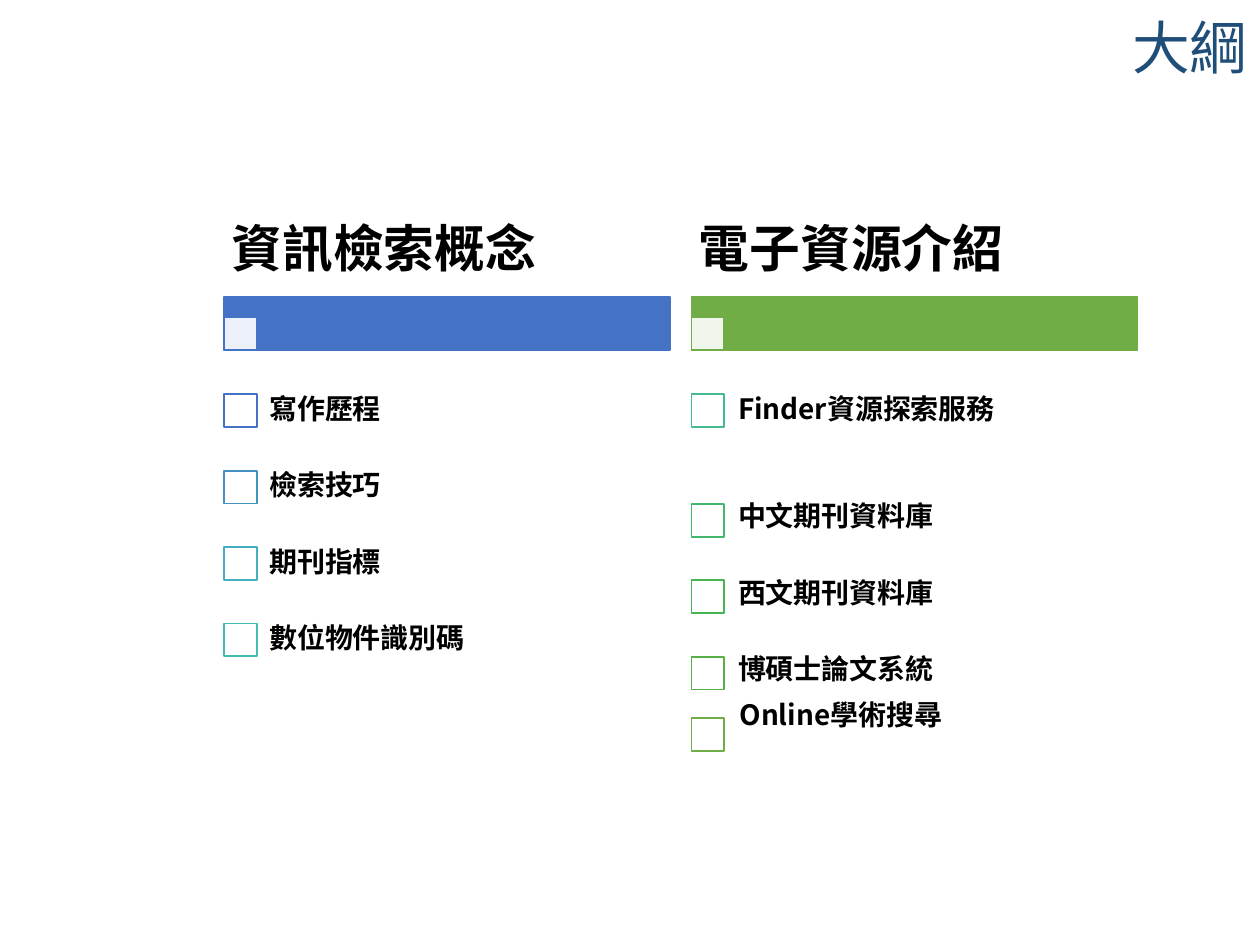
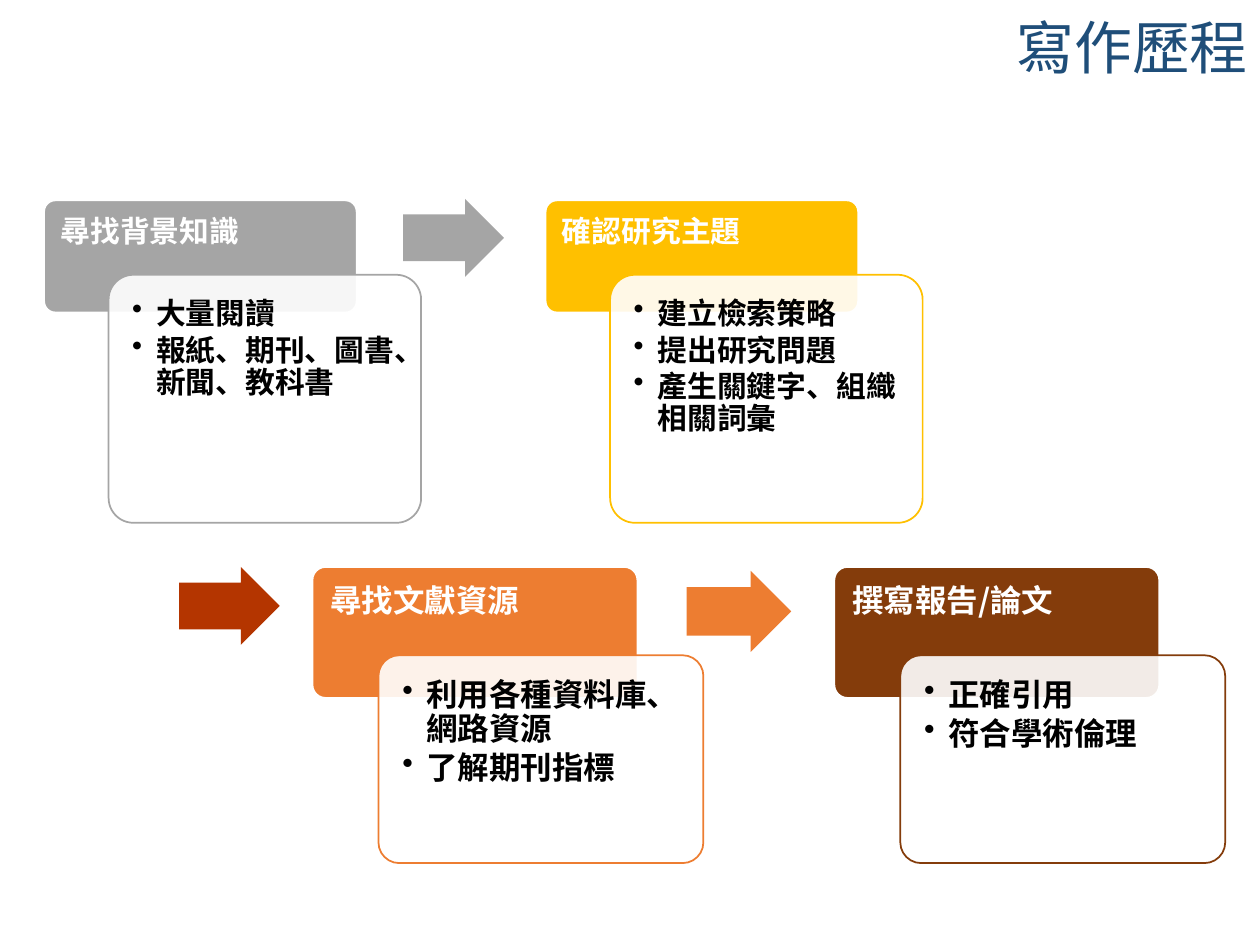
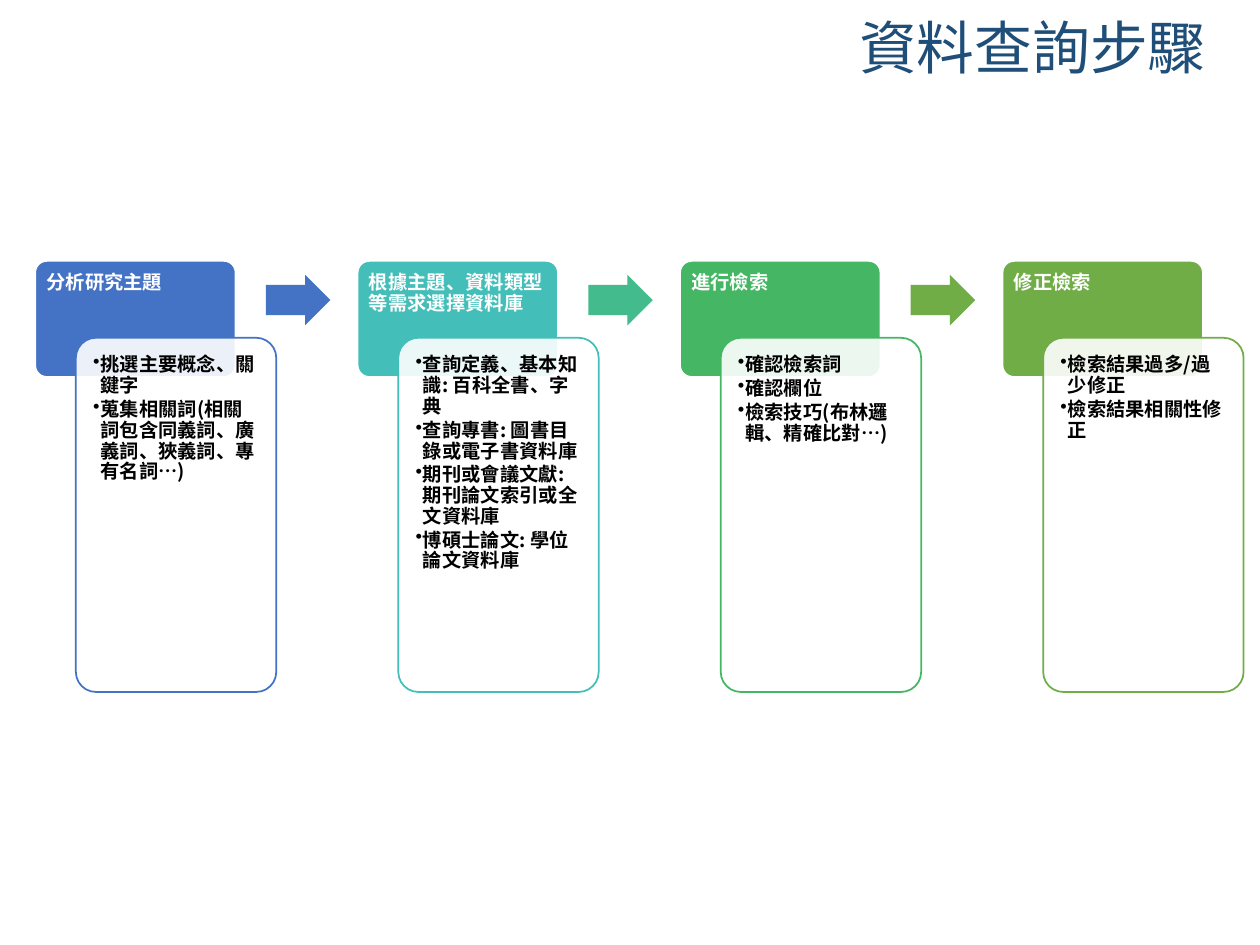
from lxml.etree import SubElement
from pptx import Presentation
from pptx.dml.color import RGBColor
from pptx.enum.shapes import MSO_SHAPE as Shape
from pptx.enum.text import MSO_ANCHOR as Anchor, PP_ALIGN as Align
from pptx.oxml.ns import qn
from pptx.util import Cm, Pt

FONT = "Noto Sans CJK SC"
COLORS = {
    "title": "1F4E79", "white": "FFFFFF", "black": "000000",
    "blue": "4472C4", "sky": "4491C2", "cyan": "43AFC0", "turquoise": "43BDAE",
    "teal": "43BEB9", "jade": "43BB8D", "mint": "44B76E", "emerald": "45B664",
    "grass": "45B451", "leaf": "56B046", "green": "70AD47",
    "gray": "A5A5A5", "yellow": "FFC000", "orange": "ED7D31",
    "brown": "843C0B", "rust": "B43500",
}
CORNER = 0.1
CORNER_INSET = CORNER * 0.293  # text inset of a rounded corner, per unit of height


class Slides:
    def __init__(self):
        self.deck = Presentation()
        self.deck.slide_width, self.deck.slide_height = Cm(25.4), Cm(19.05)
        self.page = None

    def new_page(self, title, left, align=Align.RIGHT):
        self.page = self.deck.slides.add_slide(self.deck.slide_layouts[6])
        self.label(title, left, 0, 25.4 - left, 2.03, 33, color="title",
                   bold=False, align=align, margins=(0.25, 0.13))

    def style(self, para, size, color, bold=True):
        font = para.font
        font.size, font.bold, font.name = Pt(size), bold, FONT
        font.color.rgb = RGBColor.from_string(COLORS[color])
        east_asian = SubElement(para._p.pPr.find(qn("a:defRPr")), qn("a:ea"))
        east_asian.set("typeface", FONT)

    def label(self, text, left, top, width, height, size, color="black",
              bold=True, align=Align.LEFT, margins=(0.3, 0.3)):
        """One line of text, centred vertically in its box."""
        box = self.page.shapes.add_textbox(Cm(left), Cm(top), Cm(width), Cm(height))
        frame = box.text_frame
        frame.word_wrap, frame.vertical_anchor = True, Anchor.MIDDLE
        frame.margin_left = frame.margin_right = Cm(margins[0])
        frame.margin_top = frame.margin_bottom = Cm(margins[1])
        para = frame.paragraphs[0]
        para.text, para.alignment, para.line_spacing = text, align, 0.9
        self.style(para, size, color, bold)

    def shape(self, kind, left, top, width, height, fill, line=None, opacity=None):
        shape = self.page.shapes.add_shape(kind, Cm(left), Cm(top), Cm(width), Cm(height))
        shape.shadow.inherit = False
        shape.fill.solid()
        shape.fill.fore_color.rgb = RGBColor.from_string(COLORS[fill])
        if opacity:
            tint = shape._element.spPr.find(qn("a:solidFill"))[0]
            SubElement(tint, qn("a:alpha")).set("val", str(opacity * 1000))
        if line:
            shape.line.color.rgb = RGBColor.from_string(COLORS[line])
            shape.line.width = Pt(1)
        else:
            shape.line.fill.background()
        return shape

    def arrow(self, left, top, width, height, color):
        arrow = self.shape(Shape.RIGHT_ARROW, left, top, width, height, color)
        arrow.adjustments[0], arrow.adjustments[1] = 0.6, 0.5

    def panel(self, lines, size, color, margin, indent, *place, **look):
        """Rounded box with top-left text; an indent makes the lines bullets."""
        panel = self.shape(Shape.ROUNDED_RECTANGLE, *place, **look)
        panel.adjustments[0] = CORNER
        frame = panel.text_frame
        frame.word_wrap, frame.vertical_anchor = True, Anchor.TOP
        frame.margin_left = frame.margin_right = Cm(margin)
        frame.margin_top = frame.margin_bottom = Cm(margin)
        for number, line in enumerate(lines):
            para = frame.add_paragraph() if number else frame.paragraphs[0]
            para.text, para.alignment = line, Align.LEFT
            para.line_spacing = Pt(round(size * 1.08, 1))
            if indent:
                para.space_after = Pt(round(size * 0.15, 1))
                props = para._p.get_or_add_pPr()
                props.set("marL", str(Cm(indent)))
                props.set("indent", str(-Cm(indent)))
                SubElement(props, qn("a:buChar")).set("char", "•")
            self.style(para, size, color)

    def card(self, left, top, heading, points, color, layout):
        """Coloured heading with a translucent list overlapping its corner."""
        width, head, body = layout["width"], layout["head"], layout["body"]
        right, down = layout["offset"]
        size, margin = layout["size"], layout["margin"]
        self.panel([heading], size, "white", margin - CORNER_INSET * head, 0,
                   left, top, width, head, fill=color, line="white")
        self.panel(points, size, "black", margin, layout["indent"],
                   left + right, top + down, width, body,
                   fill="white", line=color, opacity=90)

    def topic(self, left, heading, color, items):
        """Heading over a bar, then ticked items: text, colour, box top, text left and top."""
        side = 0.66
        self.shape(Shape.RECTANGLE, left, 5.99, 8.99, 1.07, color, color)
        self.shape(Shape.RECTANGLE, left, 6.4, side, side, "white", color, 90)
        self.label(heading, left, 4.11, 8.99, 1.91, 29, margins=(0.15, 0.1))
        for text, outline, box_top, text_left, text_top in items:
            self.shape(Shape.RECTANGLE, left, box_top, side, side, "white", outline)
            self.label(text, text_left, text_top, 8.36, 1.55, 16)


UPPER = dict(width=6.3, head=2.26, body=5, offset=(1.3, 1.5),
             size=17, margin=0.33, indent=0.48)
LOWER = dict(width=6.55, head=2.64, body=4.19, offset=(1.33, 1.78),
             size=18, margin=0.36, indent=0.48)
STEP = dict(width=4.04, head=2.34, body=7.14, offset=(0.82, 1.55),
            size=11, margin=0.23, indent=0.15)


def outline(slides):
    slides.new_page("大綱", 10.8)
    concepts = [("寫作歷程", "blue"), ("檢索技巧", "sky"),
                ("期刊指標", "cyan"), ("數位物件識別碼", "turquoise")]
    slides.topic(4.52, "資訊檢索概念", "blue",
                 [(text, color, 7.95 + 1.54 * row, 5.13, 7.5 + 1.54 * row)
                  for row, (text, color) in enumerate(concepts)])
    slides.topic(13.94, "電子資源介紹", "green", [
        ("Finder資源探索服務", "jade", 7.95, 14.58, 7.5),
        ("中文期刊資料庫", "mint", 10.16, 14.58, 9.66),
        ("西文期刊資料庫", "grass", 11.7, 14.58, 11.2),
        ("博碩士論文系統", "leaf", 13.24, 14.58, 12.74),
        ("Online學術搜尋", "green", 14.48, 14.61, 13.67),
    ])


def writing_process(slides):
    slides.new_page("寫作歷程", 11.1)
    slides.card(0.89, 4.04, "尋找背景知識",
                ["大量閱讀", "報紙、期刊、圖書、新聞、教科書"], "gray", UPPER)
    slides.arrow(8.13, 4.01, 2.03, 1.57, "gray")
    slides.card(11, 4.04, "確認研究主題",
                ["建立檢索策略", "提出研究問題", "產生關鍵字、組織相關詞彙"],
                "yellow", UPPER)
    slides.arrow(3.61, 11.43, 2.03, 1.57, "rust")
    slides.card(6.3, 11.43, "尋找文獻資源",
                ["利用各種資料庫、網路資源", "了解期刊指標"], "orange", LOWER)
    slides.arrow(13.84, 11.51, 2.11, 1.63, "orange")
    slides.card(16.82, 11.43, "撰寫報告/論文",
                ["正確引用", "符合學術倫理"], "brown", LOWER)


def search_steps(slides):
    slides.new_page("資料查詢步驟", 17.07, Align.LEFT)
    steps = [
        ("分析研究主題", "blue",
         ["挑選主要概念、關鍵字",
          "蒐集相關詞(相關詞包含同義詞、廣義詞、狹義詞、專有名詞…)"]),
        ("根據主題、資料類型等需求選擇資料庫", "teal",
         ["查詢定義、基本知識: 百科全書、字典",
          "查詢專書: 圖書目錄或電子書資料庫",
          "期刊或會議文獻: 期刊論文索引或全文資料庫",
          "博碩士論文: 學位論文資料庫"]),
        ("進行檢索", "emerald",
         ["確認檢索詞", "確認欄位", "檢索技巧(布林邏輯、精確比對…)"]),
        ("修正檢索", "green",
         ["檢索結果過多/過少修正", "檢索結果相關性修正"]),
    ]
    pitch = 6.5
    for column, (heading, color, points) in enumerate(steps):
        slides.card(0.71 + pitch * column, 5.26, heading, points, color, STEP)
    for gap, color in enumerate(["blue", "jade", "green"]):
        slides.arrow(5.36 + pitch * gap, 5.54, 1.3, 1.02, color)


def main():
    slides = Slides()
    outline(slides)
    writing_process(slides)
    search_steps(slides)
    slides.deck.save("out.pptx")


if __name__ == "__main__":
    main()
